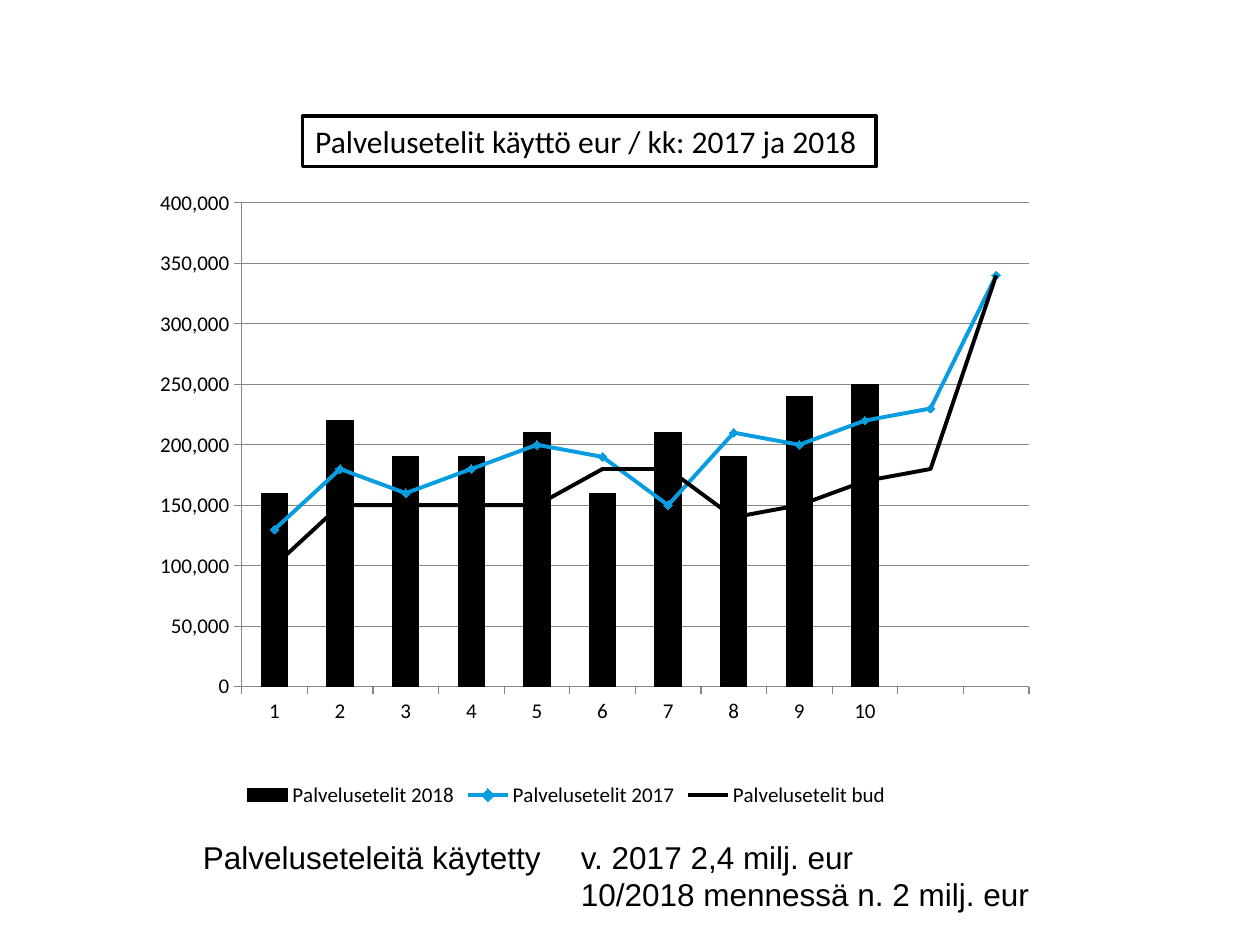
"""Build a slide showing monthly service voucher use against last year and the budget."""
import pptx
import pptx.chart.data
import pptx.dml.color
import pptx.enum.chart
import pptx.enum.text
import pptx.oxml
import pptx.oxml.ns
import pptx.util
from pptx.util import Cm

COLORS = {"ink": "000000", "paper": "FFFFFF", "blue": "089DE0", "grid": "868686"}
THOUSANDS = {
    "Palvelusetelit 2018": [160, 220, 190, 190, 210, 160, 210, 190, 240, 250, None, None],
    "Palvelusetelit 2017": [130, 180, 160, 180, 200, 190, 150, 210, 200, 220, 230, 340],
    "Palvelusetelit bud": [100, 150, 150, 150, 150, 180, 180, 140, 150, 170, 180, 340],
}
LAYOUT = {"x": 0.17, "y": 0.03, "w": 0.8, "h": 0.77}


def rgb(name):
    return pptx.dml.color.RGBColor.from_string(COLORS[name])


def style_font(font, size, family):
    font.size = pptx.util.Pt(size)
    font.name = family
    font.color.rgb = rgb("ink")


deck = pptx.Presentation()
deck.slide_width, deck.slide_height = Cm(25.4), Cm(19.05)
slide = deck.slides.add_slide(deck.slide_layouts[5])

heading = slide.shapes.title
heading.left, heading.top, heading.width, heading.height = Cm(6.1), Cm(2.34), Cm(11.56), Cm(1.02)
heading.fill.solid()
heading.fill.fore_color.rgb = rgb("paper")
heading.line.color.rgb = rgb("ink")
heading.line.width = pptx.util.Pt(2)
heading.text_frame.text = "Palvelusetelit käyttö eur / kk: 2017 ja 2018"
heading.text_frame.word_wrap = False
heading.text_frame.auto_size = pptx.enum.text.MSO_AUTO_SIZE.NONE
heading.text_frame.vertical_anchor = pptx.enum.text.MSO_ANCHOR.TOP
heading.text_frame.paragraphs[0].alignment = pptx.enum.text.PP_ALIGN.LEFT
style_font(heading.text_frame.paragraphs[0].font, 18, "Calibri")

vouchers = pptx.chart.data.CategoryChartData(number_format="#,##0")
vouchers.categories = [str(month) if month <= 10 else "" for month in range(1, 13)]
for name, values in THOUSANDS.items():
    vouchers.add_series(name, [None if value is None else value * 1000 for value in values])
chart = slide.shapes.add_chart(
    pptx.enum.chart.XL_CHART_TYPE.COLUMN_CLUSTERED,
    Cm(1.5), Cm(3.71), Cm(19.84), Cm(12.67), vouchers).chart
style_font(chart.font, 12, "Calibri")
chart.has_title = False
chart.has_legend = True
chart.legend.position = pptx.enum.chart.XL_LEGEND_POSITION.BOTTOM
chart.legend.include_in_layout = False

chart.value_axis.minimum_scale = 0
chart.value_axis.maximum_scale = 400000
chart.value_axis.major_unit = 50000
chart.value_axis.tick_labels.number_format = "#,##0"
chart.value_axis.tick_labels.number_format_is_linked = False
chart.value_axis.has_major_gridlines = True
chart.value_axis.major_gridlines.format.line.color.rgb = rgb("grid")
for axis in (chart.category_axis, chart.value_axis):
    axis.major_tick_mark = pptx.enum.chart.XL_TICK_MARK.OUTSIDE
    axis.format.line.color.rgb = rgb("grid")

columns = chart.plots[0]
columns.gap_width = 150
columns.vary_by_categories = False
columns.series[0].format.fill.solid()
columns.series[0].format.fill.fore_color.rgb = rgb("ink")
columns.series[0].format.line.color.rgb = rgb("ink")
columns.series[0].format.line.width = pptx.util.Pt(0.75)

qn = pptx.oxml.ns.qn
namespace = pptx.oxml.ns.nsdecls("c")
bar_chart = chart._chartSpace.xpath(".//c:barChart")[0]
plot_area = bar_chart.getparent()
line_chart = pptx.oxml.parse_xml(
    f'<c:lineChart {namespace}><c:grouping val="standard"/><c:varyColors val="0"/></c:lineChart>')
for series_xml in bar_chart.findall(qn("c:ser"))[1:]:
    for flag in series_xml.findall(qn("c:invertIfNegative")):
        series_xml.remove(flag)
    line_chart.append(series_xml)
line_chart.append(pptx.oxml.parse_xml(f'<c:marker {namespace} val="1"/>'))
for axis_id in bar_chart.findall(qn("c:axId")):
    line_chart.append(pptx.oxml.parse_xml(f'<c:axId {namespace} val="{axis_id.get("val")}"/>'))
bar_chart.addnext(line_chart)

for automatic in plot_area.findall(qn("c:layout")):
    plot_area.remove(automatic)
extents = "".join(f'<c:{side} val="{share}"/>' for side, share in LAYOUT.items())
plot_area.insert(0, pptx.oxml.parse_xml(
    f'<c:layout {namespace}><c:manualLayout><c:layoutTarget val="inner"/>'
    f'<c:xMode val="edge"/><c:yMode val="edge"/>{extents}</c:manualLayout></c:layout>'))

MARKERS = pptx.enum.chart.XL_MARKER_STYLE
for series, color, marker in zip(
        chart.plots[1].series, ("blue", "ink"), (MARKERS.DIAMOND, MARKERS.NONE)):
    series.smooth = False
    series.format.line.color.rgb = rgb(color)
    series.format.line.width = pptx.util.Pt(2.25)
    series.marker.style = marker
    if marker == MARKERS.DIAMOND:
        series.marker.size = 5
        series.marker.format.fill.solid()
        series.marker.format.fill.fore_color.rgb = rgb(color)
        series.marker.format.line.color.rgb = rgb(color)

totals = slide.shapes.add_textbox(Cm(3.84), Cm(16.76), Cm(17.5), Cm(1.8)).text_frame
totals.word_wrap = True
totals.text = "Palveluseteleitä käytetty\tv. 2017 2,4 milj. eur\n\t10/2018 mennessä n. 2 milj. eur"
for paragraph in totals.paragraphs:
    paragraph._p.get_or_add_pPr().append(pptx.oxml.parse_xml(
        f'<a:tabLst {pptx.oxml.ns.nsdecls("a")}><a:tab pos="{Cm(7.62)}" algn="l"/></a:tabLst>'))
    style_font(paragraph.font, 18, "Arial")

deck.save("out.pptx")
